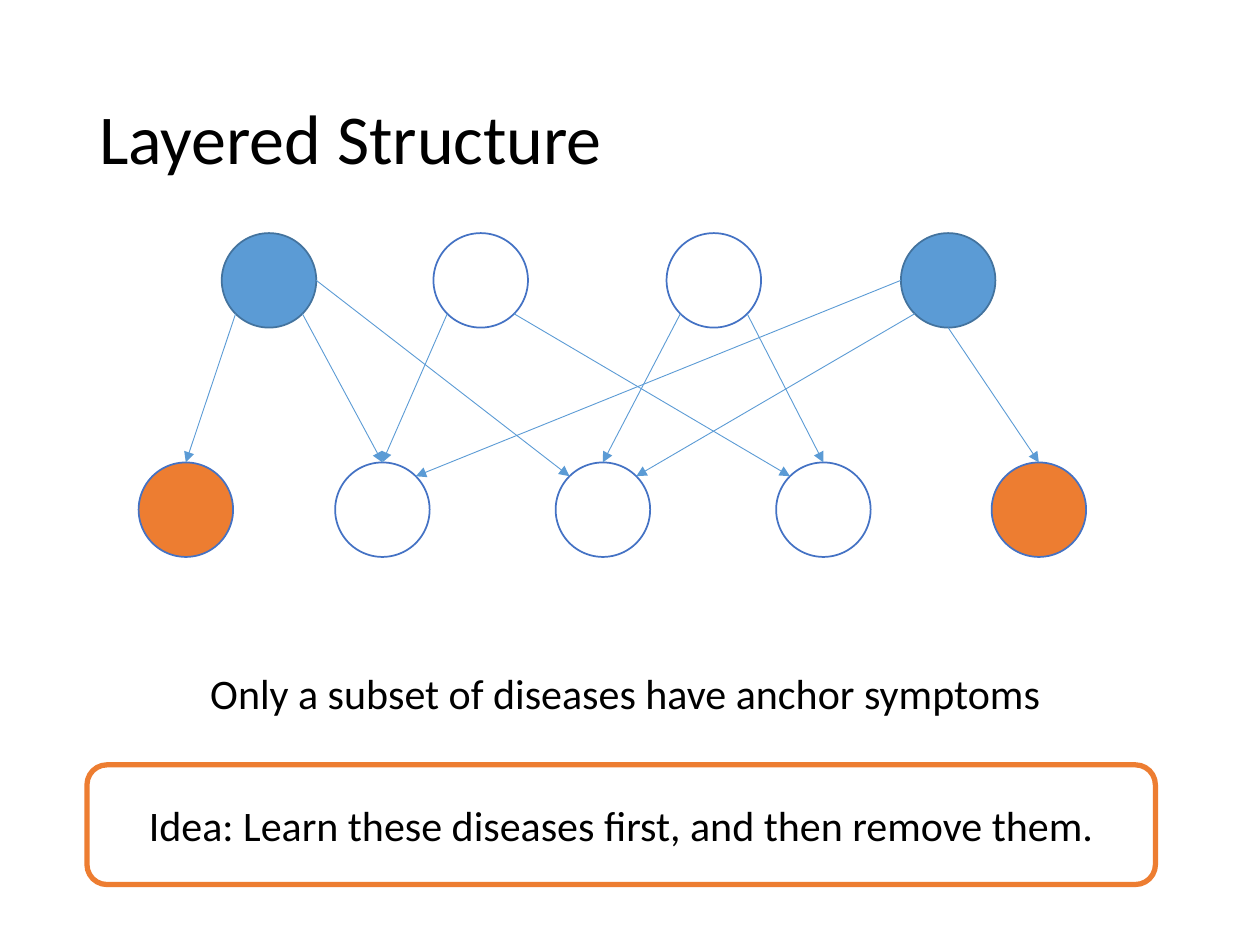
from math import sqrt
from typing import NamedTuple

from lxml.etree import SubElement
from pptx import Presentation
from pptx.dml.color import RGBColor
from pptx.enum.shapes import MSO_CONNECTOR, MSO_SHAPE
from pptx.enum.text import MSO_ANCHOR, PP_ALIGN
from pptx.oxml.ns import qn
from pptx.shapes.autoshape import Shape
from pptx.slide import Slide
from pptx.util import Inches, Pt

BLACK = RGBColor(0x00, 0x00, 0x00)
WHITE = RGBColor(0xFF, 0xFF, 0xFF)
BLUE = RGBColor(0x5B, 0x9B, 0xD5)
DARK_BLUE = RGBColor(0x43, 0x73, 0x9E)
OUTLINE_BLUE = RGBColor(0x44, 0x72, 0xC4)
ORANGE = RGBColor(0xED, 0x7D, 0x31)

FONT = "Calibri"
DIAMETER = 0.75
DISEASE_TOP = 1.85
SYMPTOM_TOP = 3.67

# Points on a circle's edge, as offsets from its centre in radii
DIAGONAL = 1 / sqrt(2)
EDGE = {
    "top": (0, -1),
    "bottom": (0, 1),
    "left": (-1, 0),
    "right": (1, 0),
    "top left": (-DIAGONAL, -DIAGONAL),
    "top right": (DIAGONAL, -DIAGONAL),
    "bottom left": (-DIAGONAL, DIAGONAL),
    "bottom right": (DIAGONAL, DIAGONAL),
}


class Node(NamedTuple):
    left: float
    top: float
    fill: RGBColor = WHITE
    outline: RGBColor = OUTLINE_BLUE

    def edge_point(self, side: str) -> tuple[float, float]:
        dx, dy = EDGE[side]
        radius = DIAMETER / 2
        return self.left + radius * (1 + dx), self.top + radius * (1 + dy)


class Link(NamedTuple):
    disease: int
    start_side: str
    symptom: int
    end_side: str


DISEASES = [
    Node(1.76, DISEASE_TOP, BLUE, DARK_BLUE),
    Node(3.44, DISEASE_TOP),
    Node(5.29, DISEASE_TOP),
    Node(7.15, DISEASE_TOP, BLUE, DARK_BLUE),
]
SYMPTOMS = [
    Node(1.1, SYMPTOM_TOP, ORANGE),
    Node(2.66, SYMPTOM_TOP),
    Node(4.41, SYMPTOM_TOP),
    Node(6.16, SYMPTOM_TOP),
    Node(7.87, SYMPTOM_TOP, ORANGE),
]
LINKS = [
    Link(0, "bottom left", 0, "top"),
    Link(0, "bottom right", 1, "top"),
    Link(0, "right", 2, "top left"),
    Link(1, "bottom left", 1, "top"),
    Link(1, "bottom right", 3, "top left"),
    Link(2, "bottom right", 3, "top"),
    Link(3, "bottom left", 2, "top right"),
    Link(3, "bottom", 4, "top"),
    Link(3, "left", 1, "top right"),
    Link(2, "bottom left", 2, "top"),
]


def write_text(shape: Shape, text: str, *, size: float = 24,
               align: PP_ALIGN = PP_ALIGN.LEFT,
               anchor: MSO_ANCHOR = MSO_ANCHOR.TOP,
               wrap: bool = True, line_spacing: float = 1.0) -> None:
    frame = shape.text_frame
    frame.word_wrap = wrap
    frame.vertical_anchor = anchor
    paragraph = frame.paragraphs[0]
    paragraph.alignment = align
    paragraph.line_spacing = line_spacing
    run = paragraph.add_run()
    run.text = text
    run.font.name = FONT
    run.font.size = Pt(size)
    run.font.color.rgb = BLACK


def add_outlined_shape(slide: Slide, preset: MSO_SHAPE, left: float, top: float,
                       width: float, height: float, *, fill: RGBColor,
                       outline: RGBColor, weight: float) -> Shape:
    shape = slide.shapes.add_shape(
        preset, Inches(left), Inches(top), Inches(width), Inches(height))
    shape.shadow.inherit = False
    shape.fill.solid()
    shape.fill.fore_color.rgb = fill
    shape.line.color.rgb = outline
    shape.line.width = Pt(weight)
    return shape


def add_link(slide: Slide, link: Link) -> None:
    x1, y1 = DISEASES[link.disease].edge_point(link.start_side)
    x2, y2 = SYMPTOMS[link.symptom].edge_point(link.end_side)
    arrow = slide.shapes.add_connector(
        MSO_CONNECTOR.STRAIGHT, Inches(x1), Inches(y1), Inches(x2), Inches(y2))
    arrow.line.color.rgb = BLUE
    arrow.line.width = Pt(0.5)
    SubElement(arrow.line._get_or_add_ln(), qn("a:tailEnd"), type="triangle")
    SubElement(arrow._element.spPr, qn("a:effectLst"))


def main() -> None:
    presentation = Presentation()
    presentation.slide_width = Inches(10)
    presentation.slide_height = Inches(7.5)
    slide = presentation.slides.add_slide(presentation.slide_layouts[6])

    # Title
    title = slide.shapes.add_textbox(
        Inches(0.69), Inches(0.4), Inches(8.62), Inches(1.45))
    write_text(title, "Layered Structure", size=40,
               anchor=MSO_ANCHOR.MIDDLE, line_spacing=0.9)

    # Disease layer above, symptom layer below
    for node in DISEASES + SYMPTOMS:
        add_outlined_shape(slide, MSO_SHAPE.OVAL, node.left, node.top,
                           DIAMETER, DIAMETER, fill=node.fill,
                           outline=node.outline, weight=1)

    # Arrows from diseases to symptoms
    for link in LINKS:
        add_link(slide, link)

    # Remark and idea
    remark = slide.shapes.add_textbox(
        Inches(1.57), Inches(5.25), Inches(6.85), Inches(0.5))
    write_text(remark, "Only a subset of diseases have anchor symptoms", wrap=False)

    idea = add_outlined_shape(slide, MSO_SHAPE.ROUNDED_RECTANGLE,
                              0.69, 6.07, 8.48, 0.95,
                              fill=WHITE, outline=ORANGE, weight=3)
    write_text(idea, "Idea: Learn these diseases first, and then remove them.",
               align=PP_ALIGN.CENTER, anchor=MSO_ANCHOR.MIDDLE)

    presentation.save("out.pptx")


if __name__ == "__main__":
    main()
